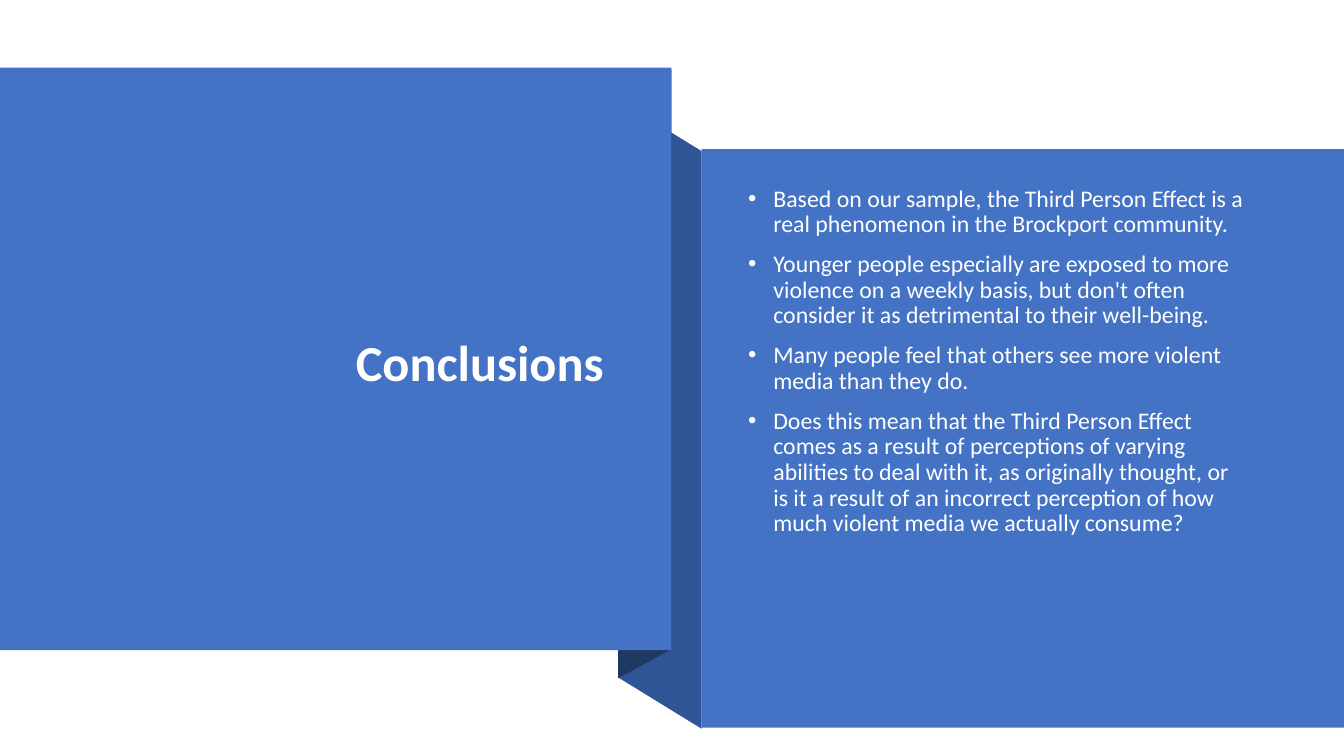
from dataclasses import dataclass

from pptx import Presentation
from pptx.dml.color import RGBColor
from pptx.enum.shapes import MSO_SHAPE
from pptx.enum.text import MSO_ANCHOR, MSO_AUTO_SIZE, PP_ALIGN
from pptx.util import Inches, Pt


@dataclass(frozen=True)
class Theme:
    font: str = "Calibri"
    panel: str = "4472C4"
    fold: str = "2F5597"
    fold_shadow: str = "203864"
    title_text: str = "FFFFFF"
    body_text: str = "FEFFFF"
    title_size: int = 36
    body_size: int = 17


THEME = Theme()

CONCLUSIONS = [
    "Based on our sample, the Third Person Effect is a real phenomenon in the "
    "Brockport community.",
    "Younger people especially are exposed to more violence on a weekly basis, "
    "but don't often consider it as detrimental to their well-being.",
    "Many people feel that others see more violent media than they do.",
    "Does this mean that the Third Person Effect comes as a result of perceptions "
    "of varying abilities to deal with it, as originally thought, or is it a result "
    "of an incorrect perception of how much violent media we actually consume?",
]


def paint(shape, color):
    shape.fill.solid()
    shape.fill.fore_color.rgb = RGBColor.from_string(color)
    shape.line.fill.background()
    shape.shadow.inherit = False


def add_panel(slide, left, top, width, height):
    box = [Inches(value) for value in (left, top, width, height)]
    paint(slide.shapes.add_shape(MSO_SHAPE.RECTANGLE, *box), THEME.panel)


def add_fold(slide, points, color):
    start, *others = [(Inches(x), Inches(y)) for x, y in points]
    builder = slide.shapes.build_freeform(*start)
    builder.add_line_segments(others, close=True)
    paint(builder.convert_to_shape(), color)


def place_placeholder(placeholder, left, top, width, height, anchor):
    """Position a placeholder, bring it to the front and return its text frame."""
    placeholder.left, placeholder.top = Inches(left), Inches(top)
    placeholder.width, placeholder.height = Inches(width), Inches(height)
    placeholder.element.getparent().append(placeholder.element)
    frame = placeholder.text_frame
    frame.word_wrap = True
    frame.auto_size = MSO_AUTO_SIZE.NONE
    frame.vertical_anchor = anchor
    return frame


def format_paragraph(paragraph, size, color, bold=False):
    paragraph.line_spacing = 0.9
    font = paragraph.font
    font.name, font.size, font.bold = THEME.font, Pt(size), bold
    font.color.rgb = RGBColor.from_string(color)


def add_title(slide, text):
    frame = place_placeholder(
        slide.shapes.title, 0.95, 1.32, 5.14, 4.6, MSO_ANCHOR.MIDDLE)
    frame.text = text
    paragraph = frame.paragraphs[0]
    paragraph.alignment = PP_ALIGN.RIGHT
    format_paragraph(paragraph, THEME.title_size, THEME.title_text, bold=True)


def add_bullets(slide, items):
    frame = place_placeholder(
        slide.placeholders[1], 7.32, 1.85, 5.14, 4.77, MSO_ANCHOR.TOP)
    frame.margin_top = 0
    frame.text = "\n".join(items)
    for paragraph in frame.paragraphs:
        format_paragraph(paragraph, THEME.body_size, THEME.body_text)
        paragraph.space_before = Pt(10)
        properties = paragraph._p.get_or_add_pPr()
        properties.set("marL", str(Inches(0.25)))
        properties.set("indent", str(-Inches(0.25)))


def main():
    presentation = Presentation()
    presentation.slide_width = Inches(13.33)
    presentation.slide_height = Inches(7.5)
    slide = presentation.slides.add_slide(presentation.slide_layouts[1])

    # Folded ribbon joining the two panels
    add_fold(slide, [(6.96, 7.23), (6.13, 6.72), (6.13, 0.99), (6.96, 1.5)],
             THEME.fold)
    add_fold(slide, [(6.66, 6.44), (6.13, 6.73), (6.13, 0.98), (6.66, 0.69)],
             THEME.fold_shadow)

    # Panels
    add_panel(slide, 0, 0.67, 6.66, 5.78)
    add_panel(slide, 6.96, 1.48, 6.37, 5.74)

    # Text
    add_title(slide, "Conclusions")
    add_bullets(slide, CONCLUSIONS)

    presentation.save("out.pptx")


if __name__ == "__main__":
    main()
